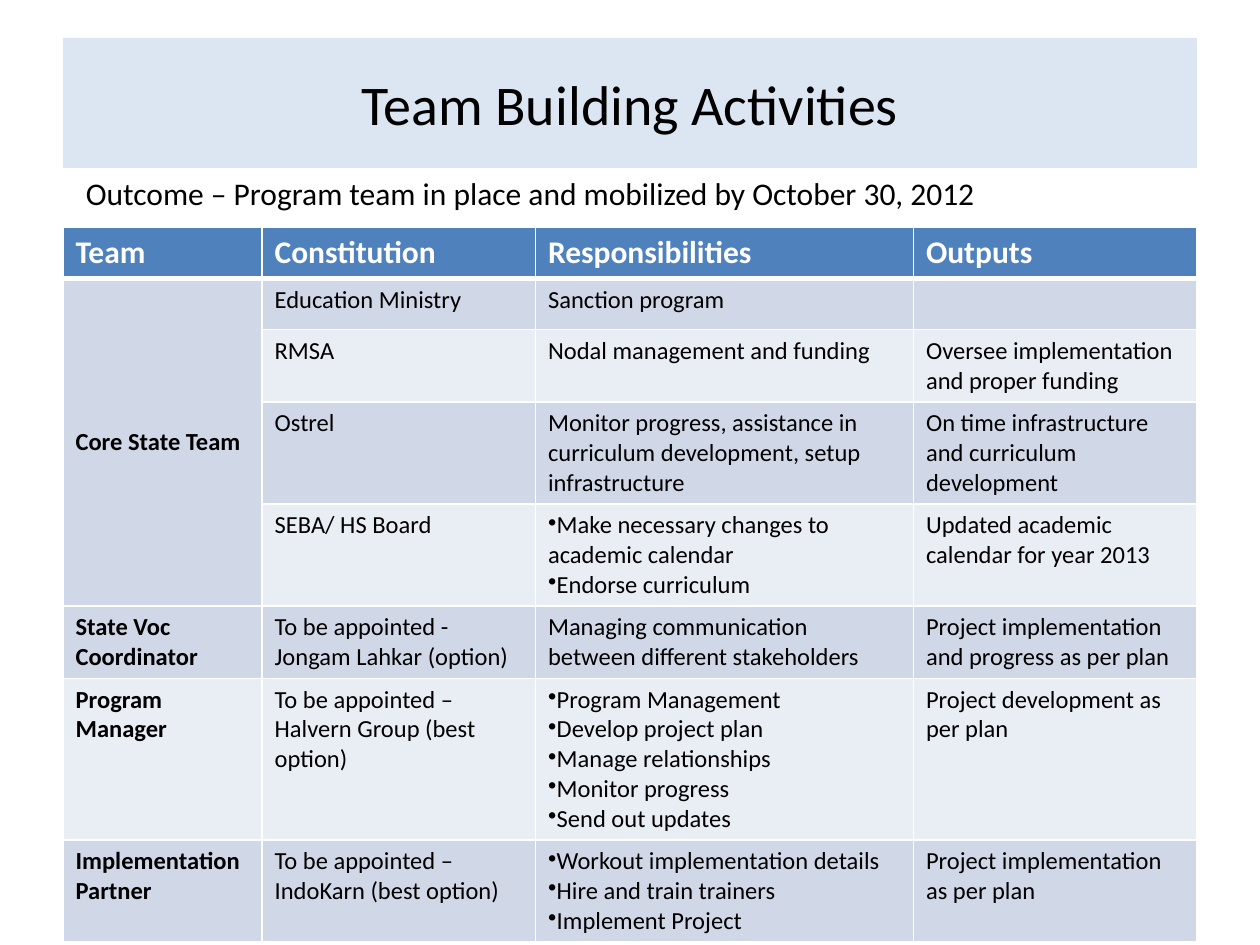
from lxml import etree
from pptx import Presentation
from pptx.dml.color import RGBColor
from pptx.enum.shapes import MSO_SHAPE
from pptx.enum.text import MSO_ANCHOR, PP_ALIGN
from pptx.oxml.ns import qn
from pptx.util import Pt

RECTANGLE = MSO_SHAPE.RECTANGLE
TOP, MIDDLE = MSO_ANCHOR.TOP, MSO_ANCHOR.MIDDLE
LEFT, CENTER = PP_ALIGN.LEFT, PP_ALIGN.CENTER

BLACK = RGBColor(0x00, 0x00, 0x00)
WHITE = RGBColor(0xFF, 0xFF, 0xFF)
TITLE_FILL = RGBColor(0xDC, 0xE6, 0xF2)
HEADER_FILL = RGBColor(0x4F, 0x81, 0xBD)
BAND_FILLS = (RGBColor(0xD0, 0xD8, 0xE8), RGBColor(0xE9, 0xED, 0xF4))

BULLET = "•"
COLUMN_WIDTHS = (113.76, 156.24, 216, 162)
ROW_HEIGHT = 29.2
CORE_TEAM_ROWS = (1, 4)
HEADERS = ("Team", "Constitution", "Responsibilities", "Outputs")
ROWS = (
    ("Core State Team", "Education Ministry", "Sanction program", ""),
    ("", "RMSA", "Nodal management and funding",
     "Oversee implementation and proper funding"),
    ("", "Ostrel",
     "Monitor progress, assistance in curriculum development, setup infrastructure",
     "On time infrastructure and curriculum development"),
    ("", "SEBA/ HS Board",
     ("Make necessary changes to academic calendar", "Endorse curriculum"),
     "Updated academic calendar for year 2013"),
    ("State Voc Coordinator", "To be appointed - Jongam Lahkar (option)",
     "Managing communication between different stakeholders",
     "Project implementation and progress as per plan"),
    ("Program Manager", "To be appointed – Halvern Group (best option)",
     ("Program Management", "Develop project plan", "Manage relationships",
      "Monitor progress", "Send out updates"),
     "Project development as per plan"),
    ("Implementation Partner", "To be appointed – IndoKarn (best option)",
     ("Workout implementation details", "Hire and train trainers",
      "Implement Project"),
     "Project implementation as per plan"),
)


def write_text(frame, text, *, size, color=BLACK, bold=False, align=LEFT, font="Calibri"):
    bulleted = isinstance(text, tuple)
    for index, line in enumerate(text if bulleted else (text,)):
        paragraph = frame.add_paragraph() if index else frame.paragraphs[0]
        paragraph.alignment = align
        paragraph.font.size = Pt(size)
        if bulleted:
            properties = paragraph._p.get_or_add_pPr()
            properties.set("marL", "0")
            properties.set("indent", "0")
            bullet = etree.Element(qn("a:buChar"), char=BULLET)
            properties.insert(0, bullet)
        if line:
            run = paragraph.add_run()
            run.text = line
            run.font.name = font
            run.font.size = Pt(size)
            run.font.bold = bold
            run.font.color.rgb = color


def set_borders(cell, widths):
    properties = cell._tc.get_or_add_tcPr()
    for index, (side, width) in enumerate(zip("LRTB", widths)):
        line = etree.Element(qn(f"a:ln{side}"), w=str(Pt(width)))
        fill = etree.SubElement(line, qn("a:solidFill"))
        etree.SubElement(fill, qn("a:srgbClr"), val=str(WHITE))
        properties.insert(index, line)


class SlideBuilder:
    """Draw styled elements on one slide, with lengths in points."""

    def __init__(self, slide):
        self.slide = slide

    def add_title(self, text, left, top, width, height):
        shape = self.slide.shapes.add_shape(
            RECTANGLE, Pt(left), Pt(top), Pt(width), Pt(height))
        shape.shadow.inherit = False
        shape.fill.solid()
        shape.fill.fore_color.rgb = TITLE_FILL
        shape.line.fill.background()
        shape.text_frame.vertical_anchor = MIDDLE
        write_text(shape.text_frame, text, size=32, align=CENTER)

    def add_label(self, text, left, top, width, height):
        box = self.slide.shapes.add_textbox(Pt(left), Pt(top), Pt(width), Pt(height))
        box.text_frame.word_wrap = False
        write_text(box.text_frame, text, size=18)

    def fill_cell(self, cell, text, fill, borders, anchor=TOP, **text_format):
        cell.fill.solid()
        cell.fill.fore_color.rgb = fill
        cell.vertical_anchor = anchor
        set_borders(cell, borders)
        write_text(cell.text_frame, text, **text_format)

    def add_team_table(self, left, top):
        row_count = len(ROWS) + 1
        table = self.slide.shapes.add_table(
            row_count, len(HEADERS), Pt(left), Pt(top),
            Pt(sum(COLUMN_WIDTHS)), Pt(ROW_HEIGHT * row_count)).table
        for column, width in zip(table.columns, COLUMN_WIDTHS):
            column.width = Pt(width)
        for row in table.rows:
            row.height = Pt(ROW_HEIGHT)
        for column, text in enumerate(HEADERS):
            self.fill_cell(table.cell(0, column), text, HEADER_FILL, (1, 1, 1, 3),
                           size=18, color=WHITE, bold=True)
        first, last = CORE_TEAM_ROWS
        for row, texts in enumerate(ROWS, start=1):
            borders = (1, 1, 3 if row == 1 else 1, 1)
            for column, text in enumerate(texts):
                merged = column == 0 and first <= row <= last
                fill = BAND_FILLS[0 if merged else (row - 1) % 2]
                self.fill_cell(table.cell(row, column), text, fill, borders,
                               anchor=MIDDLE if merged else TOP,
                               size=14, bold=column == 0)
        table.cell(first, 0).merge(table.cell(last, 0))


def main():
    presentation = Presentation()
    presentation.slide_width, presentation.slide_height = Pt(720), Pt(540)
    slide = presentation.slides.add_slide(presentation.slide_layouts[6])
    builder = SlideBuilder(slide)
    builder.add_title("Team Building Activities", 36, 21.6, 648, 74.4)
    builder.add_team_table(36, 130)
    builder.add_label("Outcome – Program team in place and mobilized by October 30, 2012",
                      42, 96, 534, 29)
    presentation.save("out.pptx")


if __name__ == "__main__":
    main()
